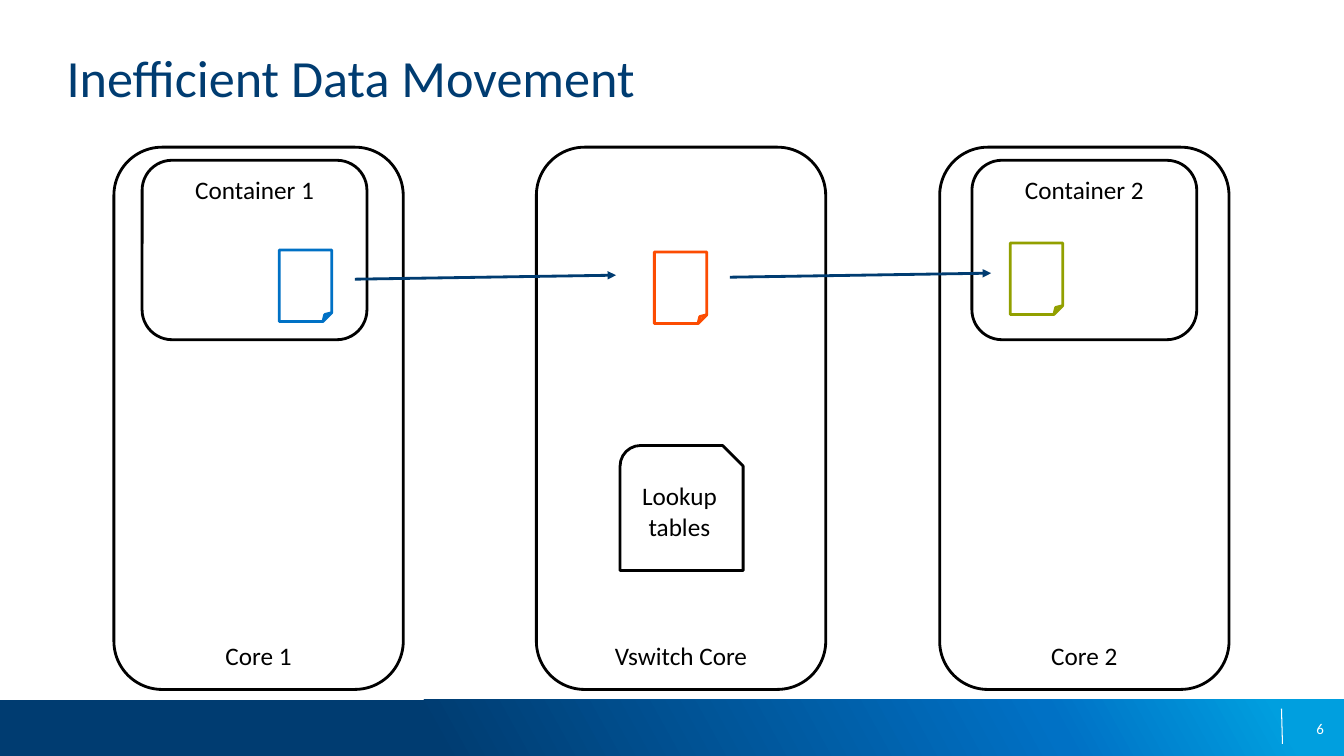
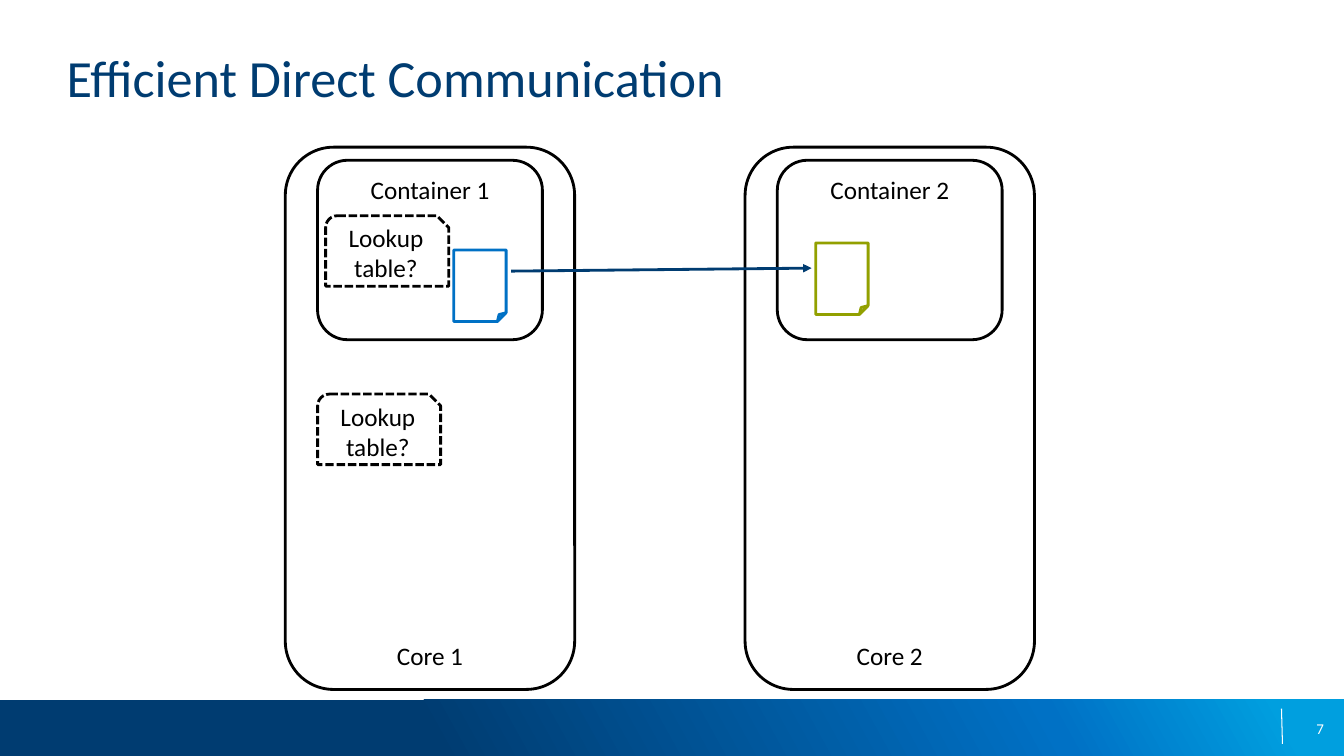
from lxml import etree
from pptx import Presentation
from pptx.dml.color import RGBColor
from pptx.enum.dml import MSO_LINE
from pptx.enum.shapes import MSO_CONNECTOR, MSO_SHAPE
from pptx.enum.text import MSO_ANCHOR, PP_ALIGN
from pptx.oxml.ns import qn
from pptx.util import Inches, Pt

# Shared style
NAVY = RGBColor(0x00, 0x3C, 0x71)
BLUE = RGBColor(0x00, 0x71, 0xC5)
SKY = RGBColor(0x00, 0x9F, 0xDF)
ORANGE = RGBColor(0xFC, 0x4C, 0x02)
GREEN = RGBColor(0x92, 0xA0, 0x00)
BLACK = RGBColor(0, 0, 0)
WHITE = RGBColor(0xFF, 0xFF, 0xFF)
FONT = "Calibri"
BAND_STOPS = ((32, NAVY), (78, BLUE), (95, SKY))
BAND_ANGLE = 331  # degrees, clockwise

RECT = MSO_SHAPE.RECTANGLE
ROUND_RECT = MSO_SHAPE.ROUNDED_RECTANGLE
SNIP_ROUND = MSO_SHAPE.SNIP_ROUND_RECTANGLE
FOLDED = MSO_SHAPE.FOLDED_CORNER
STRAIGHT = MSO_CONNECTOR.STRAIGHT
DASH = MSO_LINE.SQUARE_DOT
TOP, MIDDLE, BOTTOM = MSO_ANCHOR.TOP, MSO_ANCHOR.MIDDLE, MSO_ANCHOR.BOTTOM
LEFT, CENTER, RIGHT = PP_ALIGN.LEFT, PP_ALIGN.CENTER, PP_ALIGN.RIGHT


# Basic elements
def set_text(tf, text, size, color, align, anchor):
    tf.word_wrap = True
    tf.vertical_anchor = anchor
    p = tf.paragraphs[0]
    p.text = text
    p.alignment = align
    p.font.name = FONT
    p.font.size = Pt(size)
    p.font.color.rgb = color


def clear_margins(tf):
    tf.margin_left = tf.margin_top = tf.margin_right = tf.margin_bottom = 0


def add_box(s, kind, x, y, w, h, color=BLACK, fill=WHITE, text="", anchor=MIDDLE):
    sp = s.shapes.add_shape(kind, Inches(x), Inches(y), Inches(w), Inches(h))
    sp.shadow.inherit = False
    if fill is None:
        sp.fill.background()
    else:
        sp.fill.solid()
        sp.fill.fore_color.rgb = fill
    sp.line.color.rgb = color
    sp.line.width = Pt(2)
    if text:
        set_text(sp.text_frame, text, 18, BLACK, CENTER, anchor)
    return sp


def add_line(s, x1, y1, x2, y2, color, width):
    line = s.shapes.add_connector(
        STRAIGHT, Inches(x1), Inches(y1), Inches(x2), Inches(y2))
    line.line.color.rgb = color
    line.line.width = Pt(width)
    etree.SubElement(line.element.spPr, qn("a:effectLst"))
    return line


# Diagram parts
def add_core(s, x, name):
    add_box(s, ROUND_RECT, x, 1.46, 2.87, 5.38, fill=None, text=name, anchor=BOTTOM)


def add_container(s, x, name):
    add_box(s, ROUND_RECT, x, 1.59, 2.23, 1.78, text=name, anchor=TOP)


def add_page(s, x, y, color):
    add_box(s, FOLDED, x, y, 0.52, 0.71, color)


def add_lookup(s, x, y, h, text):
    return add_box(s, SNIP_ROUND, x, y, 1.22, h, text=text)


def add_arrow(s, x1, y1, x2, y2):
    line = add_line(s, x1, y1, x2, y2, NAVY, 2)
    etree.SubElement(line.line._get_or_add_ln(), qn("a:tailEnd"), type="triangle")


# Slide frame
def add_band(s):
    band = add_box(s, RECT, 0, 6.94, 13.33, 0.56)
    band.line.fill.background()
    band.fill.gradient()
    grad = band.element.spPr.find(qn("a:gradFill"))
    stops = grad.find(qn("a:gsLst"))
    for stop in list(stops):
        stops.remove(stop)
    for percent, color in BAND_STOPS:
        stop = etree.SubElement(stops, qn("a:gs"), pos=str(percent * 1000))
        etree.SubElement(stop, qn("a:srgbClr"), val=str(color))
    grad.find(qn("a:lin")).set("ang", str(BAND_ANGLE * 60000))


def new_slide(prs, title, number):
    s = prs.slides.add_slide(prs.slide_layouts[5])
    add_band(s)
    add_line(s, 12.71, 7.03, 12.72, 7.38, WHITE, 0.75)

    head = s.shapes.title
    head.left, head.top = Inches(0.66), Inches(0.45)
    head.width, head.height = Inches(12), Inches(1.27)
    clear_margins(head.text_frame)
    set_text(head.text_frame, title, 37.3, NAVY, LEFT, TOP)

    box = s.shapes.add_textbox(Inches(10.02), Inches(7.03), Inches(3.11), Inches(0.4))
    clear_margins(box.text_frame)
    set_text(box.text_frame, str(number), 10.7, WHITE, RIGHT, MIDDLE)
    return s


# Slides
def inefficient_slide(prs):
    s = new_slide(prs, "Inefficient Data Movement", 6)
    for x, name in ((1.13, "Core 1"), (5.32, "Vswitch Core"), (9.32, "Core 2")):
        add_core(s, x, name)
    add_container(s, 1.41, "Container 1")
    add_container(s, 9.64, "Container 2")
    add_page(s, 2.77, 2.48, BLUE)
    add_page(s, 6.49, 2.5, ORANGE)
    add_page(s, 10.02, 2.41, GREEN)
    add_lookup(s, 6.15, 4.42, 1.24, "Lookup tables")
    add_arrow(s, 3.52, 2.77, 6.11, 2.73)
    add_arrow(s, 7.24, 2.75, 9.83, 2.71)


def efficient_slide(prs):
    s = new_slide(prs, "Efficient Direct Communication", 7)
    for x, number in ((2.83, 1), (7.39, 2)):
        add_core(s, x, f"Core {number}")
        add_container(s, x + 0.32, f"Container {number}")
    add_page(s, 4.5, 2.48, BLUE)
    add_page(s, 8.09, 2.41, GREEN)
    for x, y in ((3.23, 2.14), (3.15, 3.91)):
        add_lookup(s, x, y, 0.7, "Lookup table?").line.dash_style = DASH
    add_arrow(s, 5.07, 2.69, 8.05, 2.66)


def main():
    prs = Presentation()
    prs.slide_width, prs.slide_height = Inches(13.33), Inches(7.5)
    inefficient_slide(prs)
    efficient_slide(prs)
    prs.save("out.pptx")


if __name__ == "__main__":
    main()
